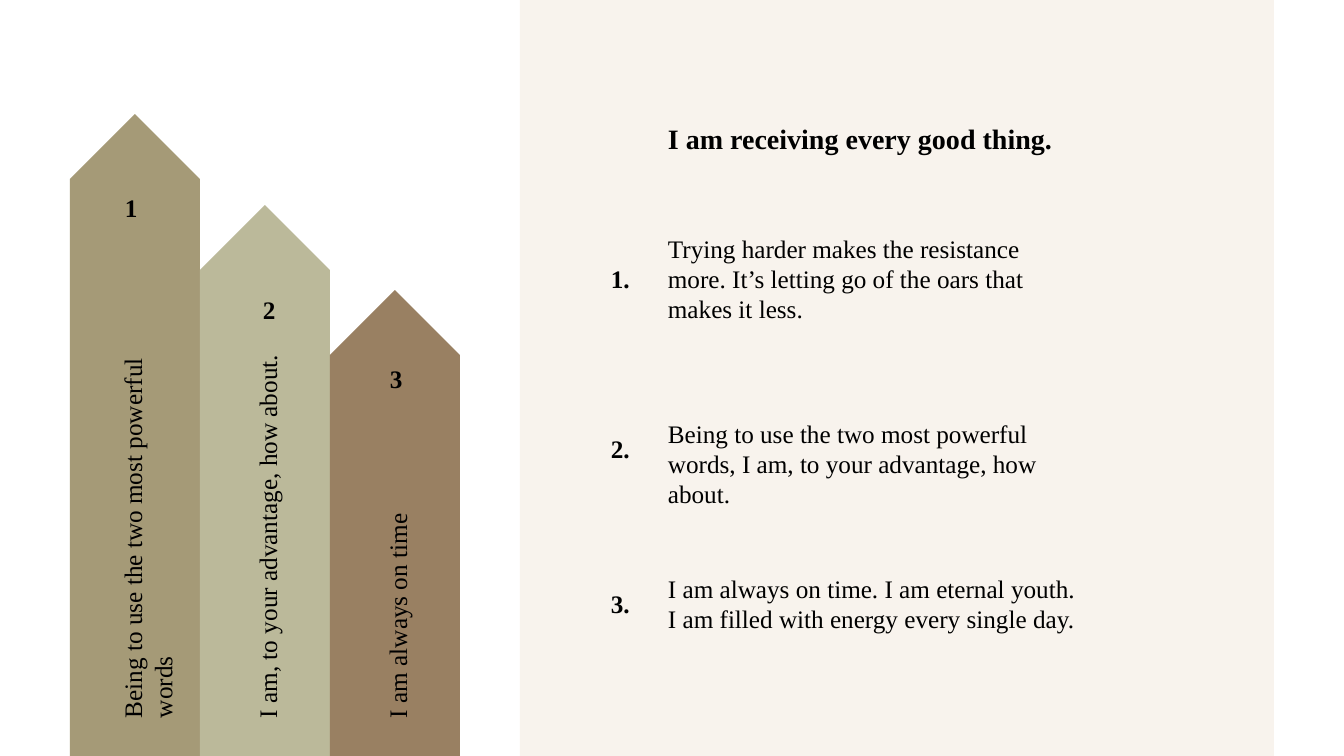
"""Build a slide with three rising arrows and a numbered list of affirmations."""
from pptx import Presentation
from pptx.dml.color import RGBColor
from pptx.enum.shapes import MSO_SHAPE as Preset
from pptx.util import Emu, Pt

CREAM = RGBColor(0xF8, 0xF3, 0xED)
OLIVE = RGBColor(0xA5, 0x9A, 0x77)
SAGE = RGBColor(0xBB, 0xB9, 0x9A)
BROWN = RGBColor(0x99, 0x80, 0x62)
BLACK = RGBColor(0, 0, 0)
FONT = "Times New Roman"

TITLE = "I am receiving every good thing."

# fill, arrow top, number box (left, top), label centre, label length, label
ARROWS = [
    (OLIVE, 114, (115, 187), 132, 446, "Being to use the two most powerful words"),
    (SAGE, 205, (253, 289), 267, 392, "I am, to your advantage, how about."),
    (BROWN, 290, (380, 358), 397, 226, "I am always on time"),
]

# number top, text top, text width, text height, text
ITEMS = [
    (258, 228, 433, 102, "Trying harder makes the resistance more. "
     "It’s letting go of the oars that makes it less."),
    (428, 413, 451, 72, "Being to use the two most powerful words, I am, "
     "to your advantage, how about."),
    (583, 568, 433, 72, "I am always on time. I am eternal youth. "
     "I am filled with energy every single day."),
]

SLIDE_WIDTH, SLIDE_HEIGHT = 1344, 756
PANEL_LEFT, PANEL_WIDTH = 520, 754
ARROW_LEFT, ARROW_WIDTH = 70, 130
LABEL_BOTTOM, LINE_HEIGHT = 728, 40
NUMBER_LEFT, TEXT_LEFT = 601, 658


def px(*lengths):
    """Turn pixel lengths into EMU."""
    return [Emu(round(length * 914400 / 100.8)) for length in lengths]


def upright(left, top, width, height):
    """Give the unrotated frame of a shape that is turned by 270 degrees."""
    shift = (height - width) / 2
    return left - shift, top + shift, height, width


def add_block(page, preset, frame, fill, rotation=0):
    """Add a filled shape without outline or shadow."""
    block = page.shapes.add_shape(preset, *px(*frame))
    block.rotation = rotation
    block.shadow.inherit = False
    block.fill.solid()
    block.fill.fore_color.rgb = fill
    block.line.fill.background()


def add_text(page, frame, text, size=18, bold=False, rotation=0):
    """Add a wrapped text box with one run."""
    box = page.shapes.add_textbox(*px(*frame))
    box.rotation = rotation
    box.text_frame.word_wrap = True
    span = box.text_frame.paragraphs[0].add_run()
    span.text = text
    span.font.name = FONT
    span.font.size = Pt(size)
    span.font.bold = bold
    span.font.color.rgb = BLACK


def main():
    """Draw the slide and save it."""
    deck = Presentation()
    deck.slide_width, deck.slide_height = px(SLIDE_WIDTH, SLIDE_HEIGHT)
    page = deck.slides.add_slide(deck.slide_layouts[6])

    add_block(page, Preset.RECTANGLE, (PANEL_LEFT, 0, PANEL_WIDTH, SLIDE_HEIGHT), CREAM)

    for index, (fill, top, number_at, centre, length, label) in enumerate(ARROWS):
        left = ARROW_LEFT + index * ARROW_WIDTH
        arrow = upright(left, top, ARROW_WIDTH, SLIDE_HEIGHT - top)
        add_block(page, Preset.PENTAGON, arrow, fill, 270)
        add_text(page, (*number_at, 34, LINE_HEIGHT), str(index + 1), bold=True)
        column = upright(centre - LINE_HEIGHT / 2, LABEL_BOTTOM - length, LINE_HEIGHT, length)
        add_text(page, column, label, rotation=270)

    add_text(page, (TEXT_LEFT, 117, 452, 44), TITLE, size=20, bold=True)
    for number, (number_top, top, width, height, text) in enumerate(ITEMS, 1):
        add_text(page, (NUMBER_LEFT, number_top, 42, LINE_HEIGHT), f"{number}.", bold=True)
        add_text(page, (TEXT_LEFT, top, width, height), text)

    deck.save("out.pptx")


if __name__ == "__main__":
    main()
